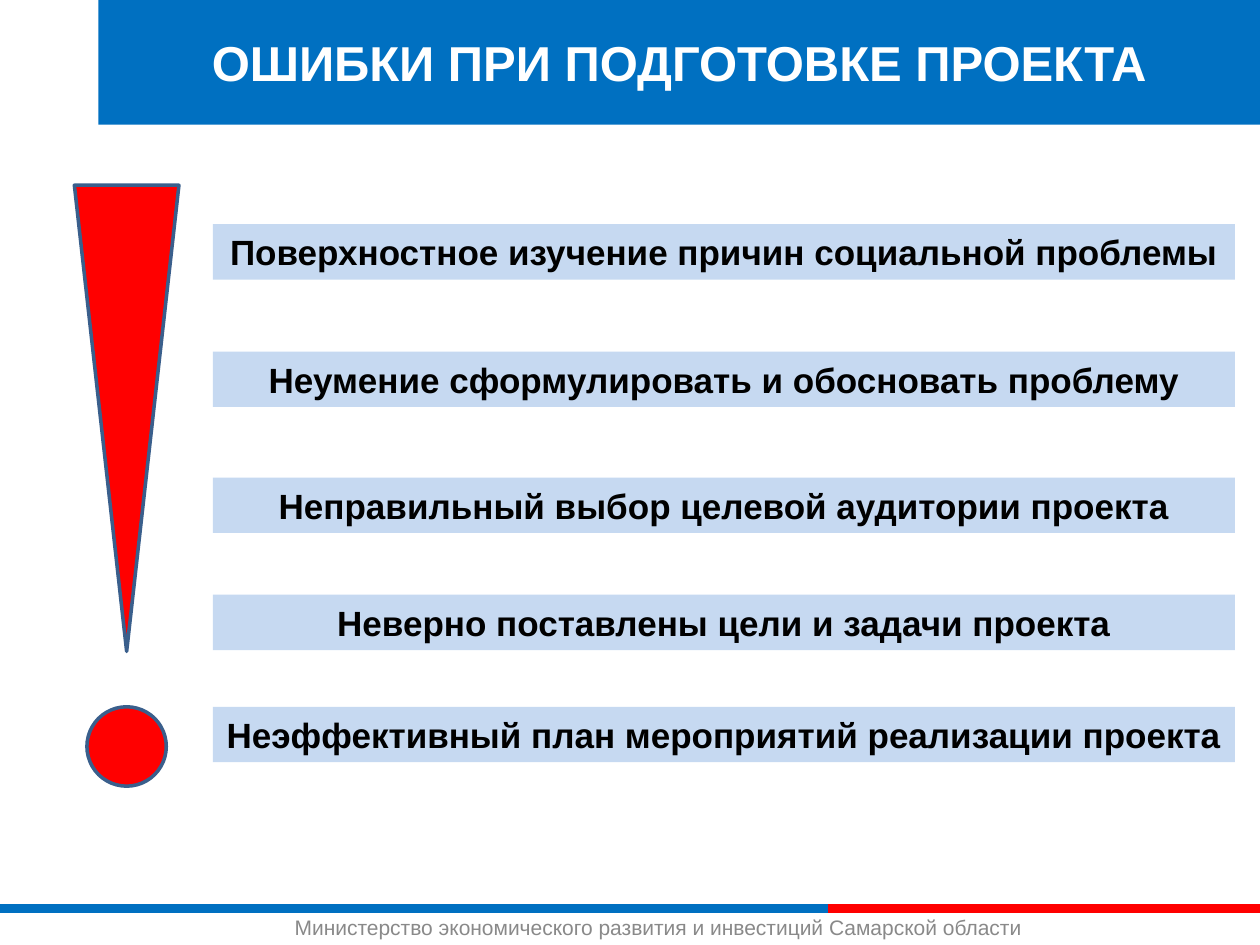
from dataclasses import dataclass

from lxml.etree import SubElement
from pptx import Presentation
from pptx.dml.color import RGBColor
from pptx.enum.shapes import MSO_CONNECTOR, MSO_SHAPE
from pptx.enum.text import MSO_ANCHOR, PP_ALIGN
from pptx.oxml.ns import qn
from pptx.util import Inches, Pt


@dataclass
class Theme:
    font: str = "Arial"
    blue: str = "0070C1"
    red: str = "FF0000"
    bar: str = "C6D9F1"
    outline: str = "3A5F8C"
    white: str = "FFFFFF"
    black: str = "000000"
    grey: str = "898989"
    title: int = 28
    body: int = 20
    footer: int = 12
    rule: int = 5
    border: int = 2


theme = Theme()
prs = Presentation()
prs.slide_width, prs.slide_height = Inches(10), Inches(7.5)
COL, ROW = prs.slide_width / 10, prs.slide_height / 7.5


def cells(x, y, w, h):
    """Turn columns and rows of the 10 x 7.5 grid into lengths."""
    return int(x * COL), int(y * ROW), int(w * COL), int(h * ROW)


def write(sp, text, size, color, bold=True, align=PP_ALIGN.CENTER):
    tf = sp.text_frame
    tf.word_wrap = True
    tf.vertical_anchor = MSO_ANCHOR.MIDDLE
    tf.margin_top = tf.margin_bottom = Inches(0.05)
    p = tf.paragraphs[0]
    p.alignment = align
    r = p.add_run()
    r.text = text
    r.font.name, r.font.size, r.font.bold = theme.font, Pt(size), bold
    r.font.color.rgb = RGBColor.from_string(color)


s = prs.slides.add_slide(prs.slide_layouts[5])

# Title band
sp = s.shapes.title
sp.left, sp.top, sp.width, sp.height = cells(0.78, 0, 9.22, 0.99)
sp.fill.solid()
sp.fill.fore_color.rgb = RGBColor.from_string(theme.blue)
write(sp, "ОШИБКИ ПРИ ПОДГОТОВКЕ ПРОЕКТА", theme.title, theme.white)

# Footer rule in two colours
for start, end, color in [(0, 6.57, theme.blue), (6.57, 10, theme.red)]:
    x1, y, x2, _ = cells(start, 7.21, end, 0)
    line = s.shapes.add_connector(MSO_CONNECTOR.STRAIGHT, x1, y, x2, y)
    line.line.color.rgb = RGBColor.from_string(color)
    line.line.width = Pt(theme.rule)
    SubElement(line._element.spPr, qn("a:effectLst"))

sp = s.shapes.add_textbox(*cells(2.24, 7.21, 6.54, 0.3))
write(sp, "Министерство экономического развития и инвестиций Самарской области",
      theme.footer, theme.grey, bold=False, align=PP_ALIGN.LEFT)

# Exclamation mark
for kind, box, angle in [
    (MSO_SHAPE.ISOSCELES_TRIANGLE, (0.59, 1.47, 0.83, 3.7), 180),
    (MSO_SHAPE.OVAL, (0.69, 5.61, 0.63, 0.63), 0),
]:
    sp = s.shapes.add_shape(kind, *cells(*box))
    sp.rotation = angle
    sp.shadow.inherit = False
    sp.fill.solid()
    sp.fill.fore_color.rgb = RGBColor.from_string(theme.red)
    sp.line.color.rgb = RGBColor.from_string(theme.outline)
    sp.line.width = Pt(theme.border)

# Mistakes
mistakes = [
    (1.78, "Поверхностное изучение причин социальной проблемы"),
    (2.79, "Неумение сформулировать и обосновать проблему"),
    (3.79, "Неправильный выбор целевой аудитории проекта"),
    (4.72, "Неверно поставлены цели и задачи проекта"),
    (5.61, "Неэффективный план мероприятий реализации проекта"),
]
for top, text in mistakes:
    sp = s.shapes.add_shape(MSO_SHAPE.RECTANGLE, *cells(1.69, top, 8.11, 0.44))
    sp.shadow.inherit = False
    sp.fill.solid()
    sp.fill.fore_color.rgb = RGBColor.from_string(theme.bar)
    sp.line.fill.background()
    sp.text_frame.margin_left = sp.text_frame.margin_right = Inches(0.05)
    write(sp, text, theme.body, theme.black)

prs.save("out.pptx")
